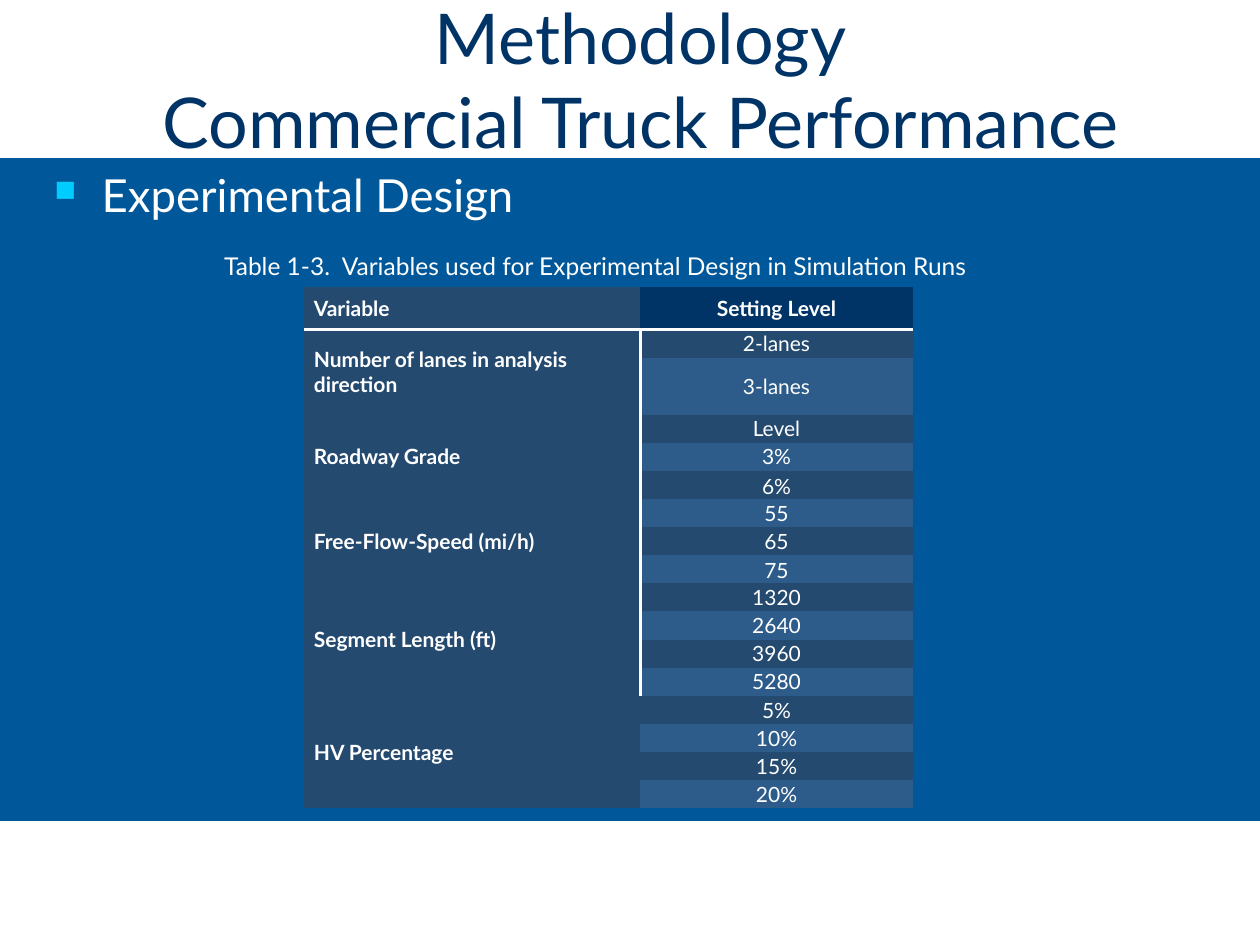
import pptx
import pptx.dml.color
import pptx.enum.shapes
import pptx.enum.text
import pptx.oxml
import pptx.oxml.ns
import pptx.util

Pt = pptx.util.Pt
ALIGN = pptx.enum.text.PP_ALIGN
ANCHOR = pptx.enum.text.MSO_ANCHOR

COLORS = {
    "background": "00589A",
    "white": "FFFFFF",
    "navy": "003366",
    "dark_row": "244A6F",
    "light_row": "2D5C8A",
    "bullet": "00CCFF",
}
NO_STYLE = "{2D5ABB26-0587-4C30-8999-92F81FD0307C}"
VARIABLES = [
    ("Number of lanes in analysis direction", ["2-lanes", "3-lanes"]),
    ("Roadway Grade", ["Level", "3%", "6%"]),
    ("Free-Flow-Speed (mi/h)", ["55", "65", "75"]),
    ("Segment Length (ft)", ["1320", "2640", "3960", "5280"]),
    ("HV Percentage", ["5%", "10%", "15%", "20%"]),
]
HEADER_HEIGHT, TALL_HEIGHT, ROW_HEIGHT = 24.3, 32.5, 16.09
TALL_ROW = 2


def rgb(name):
    return pptx.dml.color.RGBColor.from_string(COLORS[name])


def xml(markup):
    namespace = pptx.oxml.ns.nsdecls("a")
    return pptx.oxml.parse_xml(markup.replace(">", f" {namespace}>", 1))


def write(frame, text, size, font="Lato", color="white", bold=False,
          align=ALIGN.LEFT, anchor=ANCHOR.TOP):
    """Fill a text frame; a vertical tab in the text is a line break."""
    frame.word_wrap = True
    frame.vertical_anchor = anchor
    para = frame.paragraphs[0]
    para.text = text
    para.alignment = align
    for span in para.runs:
        span.font.name = font
        span.font.size = Pt(size)
        span.font.bold = bold
        span.font.color.rgb = rgb(color)
    return para


class SlideBuilder:
    """Holds the slide being built and its table text size."""

    def __init__(self, deck, table_size=12):
        self.page = deck.slides.add_slide(deck.slide_layouts[6])
        self.table_size = table_size
        fill = self.page.background.fill
        fill.solid()
        fill.fore_color.rgb = rgb("background")

    def band(self, top, height):
        box = self.page.shapes.add_shape(
            pptx.enum.shapes.MSO_SHAPE.RECTANGLE, 0, Pt(top), Pt(720), Pt(height))
        box.shadow.inherit = False
        box.fill.solid()
        box.fill.fore_color.rgb = rgb("white")
        box.line.color.rgb = rgb("white")
        box.line.width = Pt(0.75)

    def text(self, place, text, size, **style):
        box = self.page.shapes.add_textbox(*map(Pt, place))
        return write(box.text_frame, text, size, **style)

    def bullet(self, place, text, size, indent):
        para = self.text(place, text, size)
        properties = para._p.get_or_add_pPr()
        properties.set("marL", str(Pt(indent)))
        properties.set("indent", str(Pt(-indent)))
        for markup in (f'<a:buClr><a:srgbClr val="{COLORS["bullet"]}"/></a:buClr>',
                       '<a:buSzPct val="65000"></a:buSzPct>',
                       '<a:buChar char="■"></a:buChar>'):
            properties.append(xml(markup))

    def cell(self, cell, text, fill, borders=(), **style):
        """Style one cell; borders are drawn in the order L, R, T, B."""
        cell.margin_left = cell.margin_right = Pt(5.4)
        cell.margin_top = cell.margin_bottom = 0
        for side in borders:
            cell._tc.get_or_add_tcPr().append(xml(
                f'<a:ln{side} w="{Pt(2)}"><a:solidFill>'
                f'<a:srgbClr val="{COLORS["white"]}"/></a:solidFill></a:ln{side}>'))
        cell.fill.solid()
        cell.fill.fore_color.rgb = rgb(fill)
        if text:
            para = write(cell.text_frame, text, self.table_size, **style)
            cell.vertical_anchor = style.get("anchor", ANCHOR.MIDDLE)
            return para

    def table(self, left, top, widths, headings, groups):
        count = 1 + sum(len(levels) for _, levels in groups)
        heights = [ROW_HEIGHT] * count
        heights[0], heights[TALL_ROW] = HEADER_HEIGHT, TALL_HEIGHT
        frame = self.page.shapes.add_table(
            count, len(widths), Pt(left), Pt(top), Pt(sum(widths)), Pt(sum(heights)))
        table = frame.table
        table.first_row = table.horz_banding = False
        table._tbl.tblPr.find(pptx.oxml.ns.qn("a:tableStyleId")).text = NO_STYLE
        for column, width in zip(table.columns, widths):
            column.width = Pt(width)
        for line, height in zip(table.rows, heights):
            line.height = Pt(height)

        self.cell(table.cell(0, 0), headings[0], "dark_row", "B", bold=True)
        self.cell(table.cell(0, 1), headings[1], "navy", "B", bold=True,
                  align=ALIGN.CENTER)
        row = 1
        for label, levels in groups:
            last_group = label == groups[-1][0]
            first = row
            for level in levels:
                name = label if row == first else ""
                ends_triple = len(levels) == 3 and level == levels[-1]
                self.cell(table.cell(row, 0), name, "dark_row",
                          "" if last_group else "R", bold=True)
                self.cell(table.cell(row, 1), level,
                          "dark_row" if row % 2 else "light_row",
                          "" if last_group else "L", align=ALIGN.CENTER,
                          anchor=ANCHOR.BOTTOM if ends_triple else ANCHOR.MIDDLE)
                row += 1
            table.cell(first, 0).merge(table.cell(row - 1, 0))


def main():
    deck = pptx.Presentation()
    deck.slide_width, deck.slide_height = Pt(720), Pt(540)
    slide = SlideBuilder(deck)
    slide.band(0, 90)
    slide.band(469.5, 70.5)
    slide.text((24, 15, 684, 60), "Methodology\vCommercial Truck Performance", 40,
               color="navy", align=ALIGN.CENTER, anchor=ANCHOR.MIDDLE)
    slide.bullet((24, 92, 672, 370), "Experimental Design", 26, indent=27)
    slide.table(174, 164, (192, 155.5), ("Variable", "Setting Level"), VARIABLES)
    slide.text((121, 139.8, 562, 24.2),
               "Table 1-3.  Variables used for Experimental Design in Simulation Runs", 14)
    deck.save("out.pptx")


if __name__ == "__main__":
    main()
